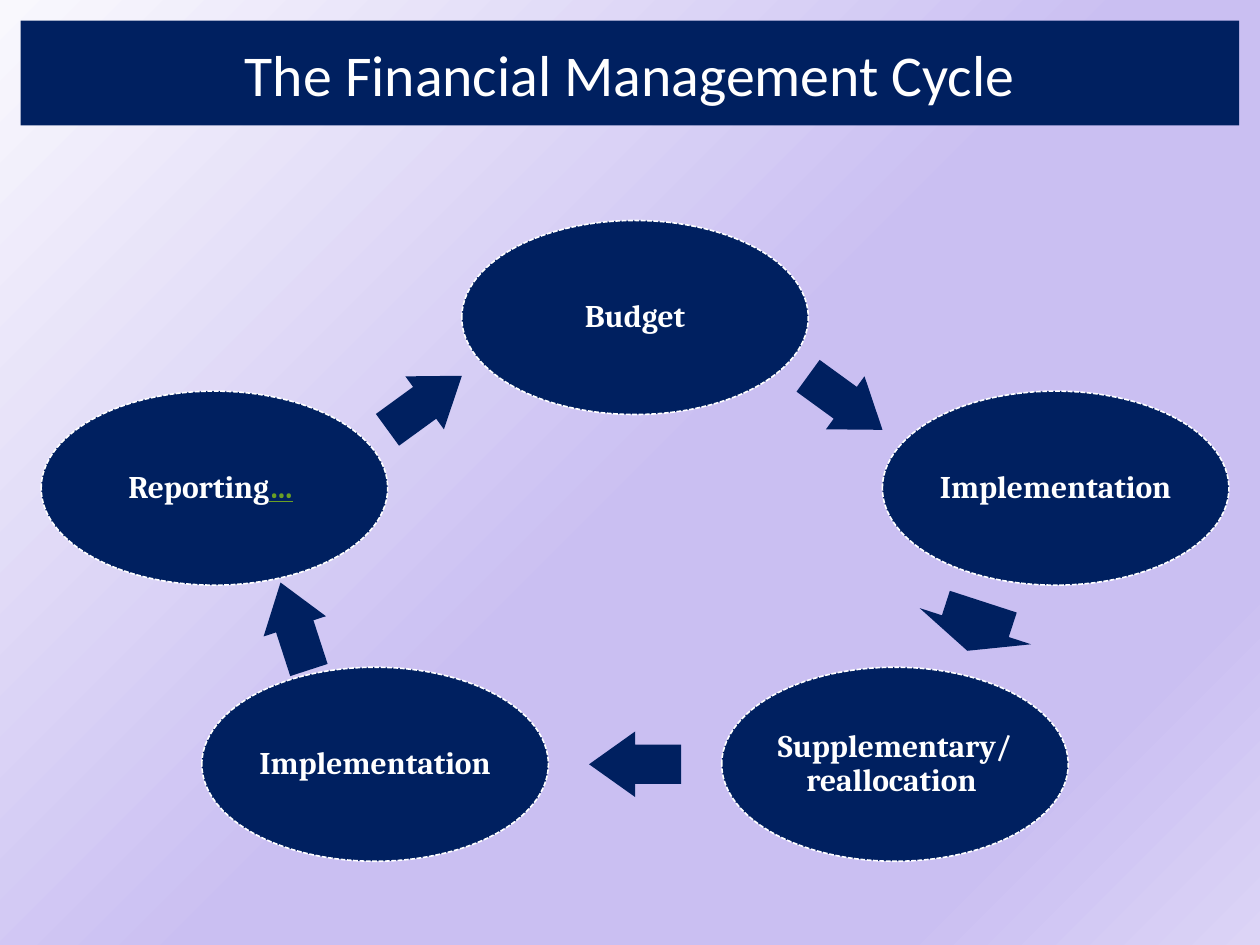
import math
import pptx
import pptx.util
import pptx.dml.color
import pptx.enum.dml
import pptx.enum.shapes
import pptx.enum.text
import pptx.oxml

Inches, Pt = pptx.util.Inches, pptx.util.Pt
SHAPE = pptx.enum.shapes.MSO_SHAPE

# Content: each stage is a list of (text, is accent)
TITLE = "The Financial Management Cycle"
STAGES = [
    [("Budget", False)],
    [("Implementation", False)],
    [("Supplementary/ reallocation ", False)],
    [("Implementation", False)],
    [("Reporting", False), ("…", True), (" ", False)],
]

THEME = {
    "navy": "002060", "white": "FFFFFF", "green": "6B9F25",
    "back": [(0, "F9F8FD"), (52, "CABFF2"), (83, "CABFF2"), (100, "DCD4F6")],
    "head": ("Calibri", 33, False), "body": ("Cambria", 18, True),
}

# Geometry in inches: stages sit at equal angles on a wide ring
MID_X, MID_Y = 5.04, 4.48
RING_X, RING_Y = 3.51, 1.96
OVAL = (2.75, 1.54)
ARROW, SHORT = (0.73, 0.52), (0.41, 0.93)
SIZES = [ARROW, SHORT, ARROW, ARROW, ARROW]
SHAFT = 0.6


def color(name):
    return pptx.dml.color.RGBColor.from_string(THEME[name])


def paint_back(slide):
    stops = "".join(
        f'<a:gs pos="{pos * 1000}"><a:srgbClr val="{tone}"/></a:gs>'
        for pos, tone in THEME["back"])
    grad = pptx.oxml.parse_xml(
        '<a:gradFill xmlns:a="http://schemas.openxmlformats.org/drawingml/2006/main"'
        f' rotWithShape="1"><a:gsLst>{stops}</a:gsLst>'
        '<a:lin ang="2700000" scaled="0"/></a:gradFill>')
    fill = slide.background.fill
    fill.solid()
    solid = slide.element.find(".//" + pptx.oxml.ns.qn("a:solidFill"))
    solid.getparent().replace(solid, grad)


def add_block(slide, kind, mid, size):
    left, top = (m - s / 2 for m, s in zip(mid, size))
    block = slide.shapes.add_shape(kind, *map(Inches, (left, top, *size)))
    block.shadow.inherit = False
    block.fill.solid()
    block.fill.fore_color.rgb = color("navy")
    block.line.fill.background()
    return block


def add_text(block, runs, style, space=1.0):
    frame = block.text_frame
    frame.word_wrap = True
    frame.vertical_anchor = pptx.enum.text.MSO_ANCHOR.MIDDLE
    frame.margin_left = frame.margin_right = 0
    frame.margin_top = frame.margin_bottom = 0
    para = frame.paragraphs[0]
    para.alignment = pptx.enum.text.PP_ALIGN.CENTER
    para.line_spacing = space
    face, size, bold = THEME[style]
    para.font.name, para.font.size, para.font.bold = face, Pt(size), bold
    para.font.color.rgb = color("white")
    for text, accent in runs:
        run = para.add_run()
        run.text = text
        run.font.color.rgb = color("green" if accent else "white")
        if accent:
            run.font.underline = True


def add_stage(slide, mid, runs):
    oval = add_block(slide, SHAPE.OVAL, mid, OVAL)
    oval.line.color.rgb = color("white")
    oval.line.width = Pt(0.9)
    oval.line.dash_style = pptx.enum.dml.MSO_LINE.SQUARE_DOT
    add_text(oval, runs, "body", 0.9)


def add_arrow(slide, mid, size, angle):
    arrow = add_block(slide, SHAPE.RIGHT_ARROW, mid, size)
    arrow.rotation = angle
    # The head takes half of the length
    arrow.adjustments[0] = SHAFT
    arrow.adjustments[1] = size[0] / 2 / min(size)


def main():
    deck = pptx.Presentation()
    deck.slide_width, deck.slide_height = Inches(10), Inches(7.5)
    slide = deck.slides.add_slide(deck.slide_layouts[6])
    paint_back(slide)

    # Title bar
    bar = add_block(slide, SHAPE.RECTANGLE, (5, 0.58), (9.67, 0.83))
    add_text(bar, [(TITLE, False)], "head")

    # Stages clockwise from the top, an arrow halfway to each next one
    count = len(STAGES)
    step = 360 / count
    turns = [math.radians(step * i) for i in range(count)]
    mids = [(MID_X + RING_X * math.sin(t), MID_Y - RING_Y * math.cos(t))
            for t in turns]
    for i, (mid, runs) in enumerate(zip(mids, STAGES)):
        after = mids[(i + 1) % count]
        half = [(a + b) / 2 for a, b in zip(mid, after)]
        add_stage(slide, mid, runs)
        add_arrow(slide, half, SIZES[i], step * (i + 0.5))

    deck.save("out.pptx")


if __name__ == "__main__":
    main()
